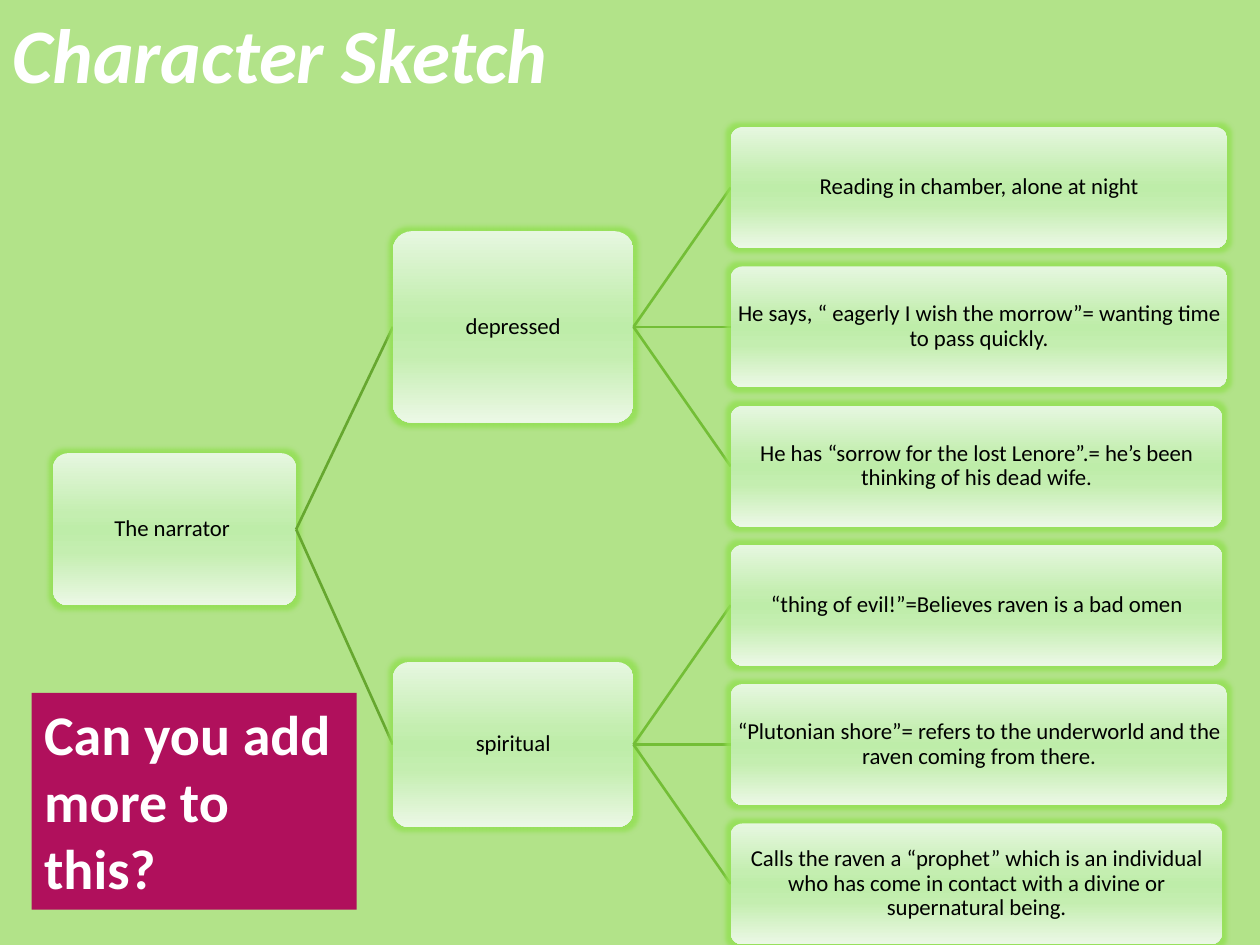
"""Builds the Character Sketch slide: a tree from the narrator to traits and evidence."""
from lxml import etree
from pptx import Presentation
from pptx import util as u
from pptx.dml.color import RGBColor
from pptx.enum import shapes, text
from pptx.oxml import ns


def paint(hue):
    """Return the colour of a hex string."""
    return RGBColor.from_string(hue)


def add_node(left, mid, wide, high, words, start=None, hue=None):
    """Draw a line from start, if given, and then a glowing box centred on mid."""
    if start:
        line = slide.shapes.add_connector(
            shapes.MSO_CONNECTOR.STRAIGHT, *map(u.Cm, (*start, left, mid)))
        line.line.color.rgb = paint(hue)
        line.line.width = u.Pt(1.5)
        etree.SubElement(line.element.spPr, ns.qn("a:effectLst"))
    box = slide.shapes.add_shape(
        shapes.MSO_SHAPE.ROUNDED_RECTANGLE,
        *map(u.Cm, (left, mid - high / 2, wide, high)))
    box.adjustments[0] = 0.1
    box.line.fill.background()
    box.fill.gradient()
    box.fill.gradient_angle = 270
    props = box.element.spPr
    stops = props.find(".//" + ns.qn("a:gsLst"))
    for stop in list(stops):
        stops.remove(stop)
    for pos, tint in STOPS:
        stop = etree.SubElement(stops, ns.qn("a:gs"), pos=str(pos * 1000))
        etree.SubElement(stop, ns.qn("a:srgbClr"), val=tint)
    box.shadow.inherit = False
    glow = etree.SubElement(props.find(ns.qn("a:effectLst")), ns.qn("a:glow"), rad=str(u.Pt(5)))
    shade = etree.SubElement(glow, ns.qn("a:srgbClr"), val="92E052")
    etree.SubElement(shade, ns.qn("a:alpha"), val="80000")
    frame = box.text_frame
    frame.word_wrap = True
    frame.vertical_anchor = text.MSO_ANCHOR.MIDDLE
    frame.margin_left = frame.margin_right = u.Cm(0.03)
    frame.margin_top = frame.margin_bottom = u.Cm(0.03)
    frame.text = words
    para = frame.paragraphs[0]
    para.alignment = text.PP_ALIGN.CENTER
    para.line_spacing = 0.9
    para.font.name = "Calibri"
    para.font.size = u.Pt(13)
    para.font.color.rgb = paint("000000")


STOPS = [(0, "E6F7E0"), (40, "C4EEB0"), (50, "BEEDA9"), (65, "C4EEB0"), (100, "ECF8E6")]
PITCH = 2.81
TRAITS = [
    ("depressed", 6.59, 3.86, [
        ("Reading in chamber, alone at night", 10.01),
        ("He says, “ eagerly I wish the morrow”= wanting time to pass quickly.", 10.01),
        ("He has “sorrow for the lost Lenore”.= he’s been thinking of his dead wife.", 9.91),
    ]),
    ("spiritual", 15.01, 3.33, [
        ("“thing of evil!”=Believes raven is a bad omen", 9.91),
        ("“Plutonian shore”= refers to the underworld and the raven coming from there.", 10.01),
        ("Calls the raven a “prophet” which is an individual who has come in contact "
         "with a divine or supernatural being.", 9.91),
    ]),
]

deck = Presentation()
deck.slide_width, deck.slide_height = u.Cm(25.4), u.Cm(19.05)
slide = deck.slides.add_slide(deck.slide_layouts[5])
slide.background.fill.solid()
slide.background.fill.fore_color.rgb = paint("B2E389")

title = slide.shapes.title
title.left, title.top, title.width, title.height = map(u.Cm, (0, 0, 11.86, 2.13))
title.text = "Character Sketch"
title.text_frame.word_wrap = False
title.text_frame.vertical_anchor = text.MSO_ANCHOR.TOP
head = title.text_frame.paragraphs[0]
head.alignment = text.PP_ALIGN.LEFT
head.font.size = u.Pt(44)
head.font.italic = True

add_node(1.07, 10.67, 4.9, 3.07, "The narrator ")
for trait, mid, high, proofs in TRAITS:
    add_node(7.92, mid, 4.85, high, trait, (5.97, 10.67), "66A72F")
    for row, (proof, wide) in enumerate(proofs, -1):
        add_node(14.73, mid + row * PITCH, wide, 2.44, proof, (12.77, mid), "73BE36")

ask = slide.shapes.add_shape(
    shapes.MSO_SHAPE.RECTANGLE, *map(u.Cm, (0.64, 13.97, 6.55, 4.37)))
ask.shadow.inherit = False
ask.fill.solid()
ask.fill.fore_color.rgb = paint("B0105C")
ask.line.fill.background()
ask.text_frame.word_wrap = True
ask.text_frame.vertical_anchor = text.MSO_ANCHOR.TOP
ask.text_frame.text = "Can you add more to this?"
call = ask.text_frame.paragraphs[0]
call.alignment = text.PP_ALIGN.LEFT
call.font.size = u.Pt(32)

for para in (head, call):
    para.font.name = "Calibri"
    para.font.bold = True
    para.font.color.rgb = paint("FFFFFF")

deck.save("out.pptx")
